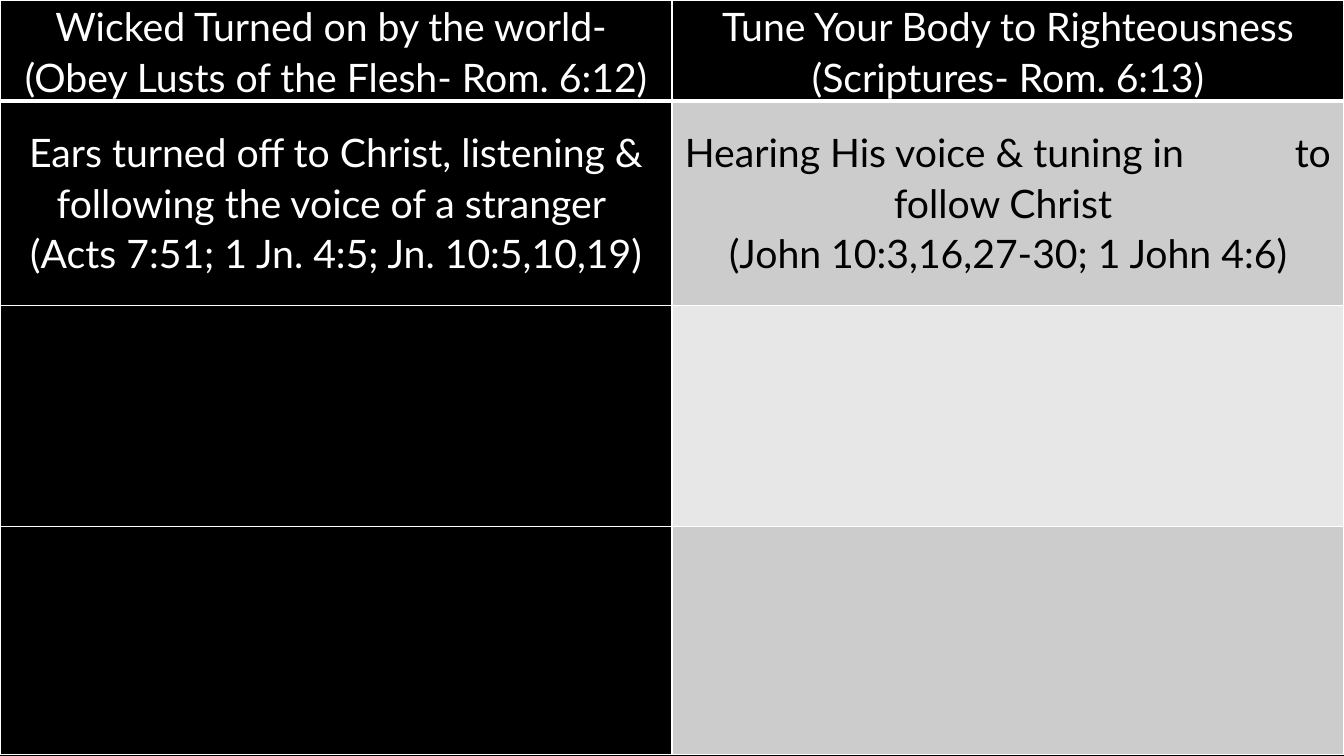
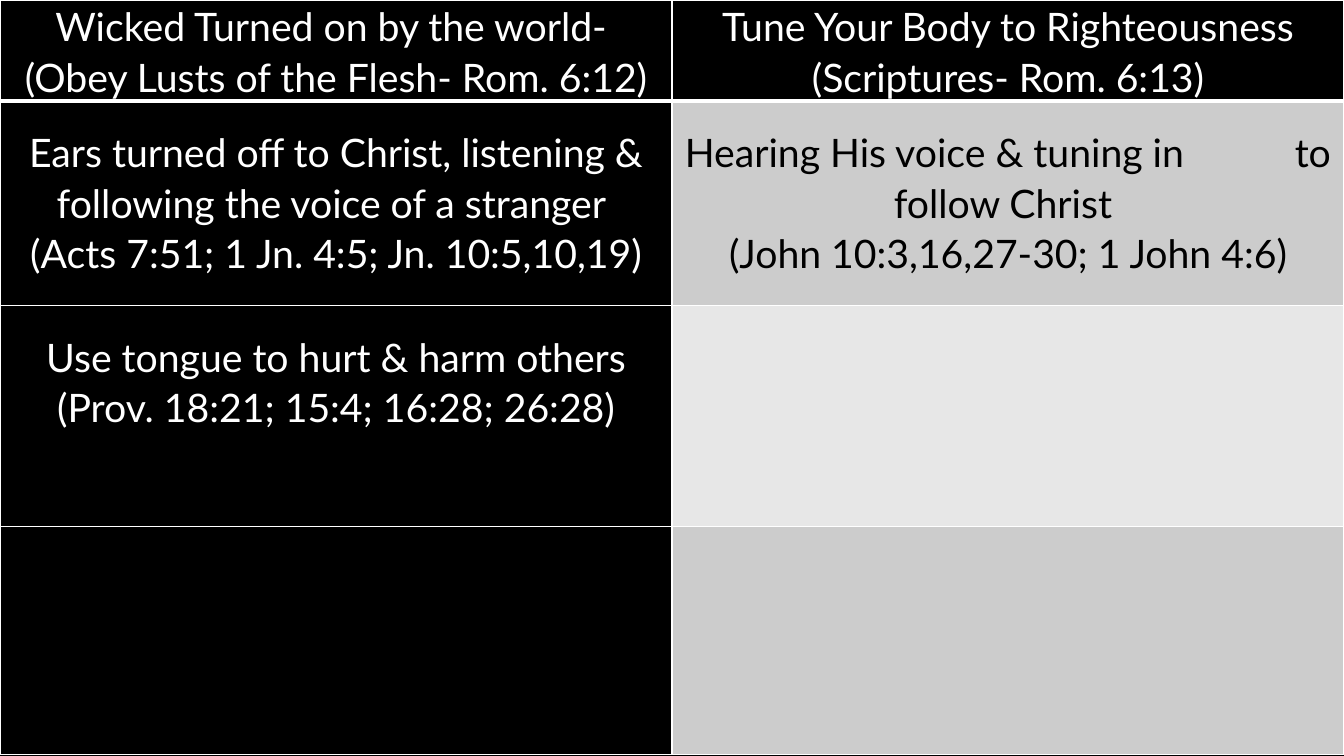
from pptx import Presentation
from pptx.dml.color import RGBColor as Rgb
from pptx.enum.text import PP_ALIGN as Align
from pptx.oxml import parse_xml
from pptx.oxml.ns import nsdecls
from pptx.util import Pt

COLORS = {"black": "000000", "white": "FFFFFF", "gray": "CCCCCC", "light": "E7E7E7"}
PAGE_WIDTH, PAGE_HEIGHT = 960, 540
ROW_HEIGHTS = [71, 146, 158, 163]
ROW_FILLS = [("black", "black"), ("black", "gray"), ("black", "light"), ("black", "gray")]
FONT_FORMAT = {"name": "Lato", "size": Pt(28)}
PARA_FORMAT = {"alignment": Align.CENTER, "line_spacing": 1.07}
MARGINS = {"margin_left": Pt(5), "margin_right": Pt(5), "margin_bottom": 0}
BODY_TOP_MARGIN = 18
THIN, THICK = 1, 3
WIDE_GAP = 72  # extra width, in points, of the space that joins two pieces of a line

# A cell is a list of paragraphs; a paragraph is a list of pieces joined by a wide gap.
HEADINGS = [
    [["Wicked Turned on by the world- "], ["(Obey Lusts of the Flesh- Rom. 6:12)"]],
    [["Tune Your Body to Righteousness (Scriptures- Rom. 6:13)"]],
]
EARS = [
    [["Ears turned off to Christ, listening & following the voice of a stranger "],
     ["(Acts 7:51; 1 Jn. 4:5; Jn. 10:5,10,19)"]],
    [["Hearing His voice & tuning in", "to follow Christ "],
     ["(John 10:3,16,27-30; 1 John 4:6)"]],
]
TONGUE = [
    [["Use tongue to hurt & harm others"], ["(Prov. 18:21; 15:4; 16:28; 26:28)"]],
    [],
]
EMPTY = [[], []]
PAGES = [
    [HEADINGS, EARS, EMPTY, EMPTY],
    [HEADINGS, EARS, TONGUE, EMPTY],
]


def color(name):
    return Rgb.from_string(COLORS[name])


def set_format(target, values):
    for name, value in values.items():
        setattr(target, name, value)


def add_borders(cell, top, bottom):
    """Draw white borders; must come before the fill, which follows them in the XML."""
    widths = {"lnL": THIN, "lnR": THIN, "lnT": top, "lnB": bottom}
    properties = cell._tc.get_or_add_tcPr()
    for tag, width in widths.items():
        properties.append(parse_xml(
            f'<a:{tag} {nsdecls("a")} w="{Pt(width)}"><a:solidFill>'
            f'<a:srgbClr val="{COLORS["white"]}"/></a:solidFill></a:{tag}>'))


def add_span(para, text, ink):
    span = para.add_run()
    span.text = text
    set_format(span.font, FONT_FORMAT)
    span.font.color.rgb = color(ink)
    return span


def write_paragraph(para, pieces, ink):
    set_format(para, PARA_FORMAT)
    for index, piece in enumerate(pieces):
        if index:
            gap = add_span(para, " ", ink)
            gap.font._element.set("spc", str(WIDE_GAP * 100))
        add_span(para, piece, ink)


def write_cell(cell, paragraphs, ink):
    frame = cell.text_frame
    for index, pieces in enumerate(paragraphs):
        para = frame.add_paragraph() if index else frame.paragraphs[0]
        write_paragraph(para, pieces, ink)


def format_cell(cell, row, fill):
    set_format(cell, MARGINS)
    cell.margin_top = Pt(BODY_TOP_MARGIN if row else 0)
    add_borders(cell, top=THICK if row == 1 else THIN, bottom=THIN if row else THICK)
    cell.fill.solid()
    cell.fill.fore_color.rgb = color(fill)


def add_comparison(page, rows):
    table = page.shapes.add_table(
        len(rows), 2, 0, 0, Pt(PAGE_WIDTH), Pt(sum(ROW_HEIGHTS))).table
    table.horz_banding = False
    for row, (height, fills, texts) in enumerate(zip(ROW_HEIGHTS, ROW_FILLS, rows)):
        table.rows[row].height = Pt(height)
        for column, (fill, paragraphs) in enumerate(zip(fills, texts)):
            cell = table.cell(row, column)
            format_cell(cell, row, fill)
            write_cell(cell, paragraphs, "white" if fill == "black" else "black")


def add_page(deck, rows):
    page = deck.slides.add_slide(deck.slide_layouts[6])
    page.background.fill.solid()
    page.background.fill.fore_color.rgb = color("black")
    add_comparison(page, rows)


def main():
    deck = Presentation()
    set_format(deck, {"slide_width": Pt(PAGE_WIDTH), "slide_height": Pt(PAGE_HEIGHT)})
    for rows in PAGES:
        add_page(deck, rows)
    deck.save("out.pptx")


if __name__ == "__main__":
    main()
